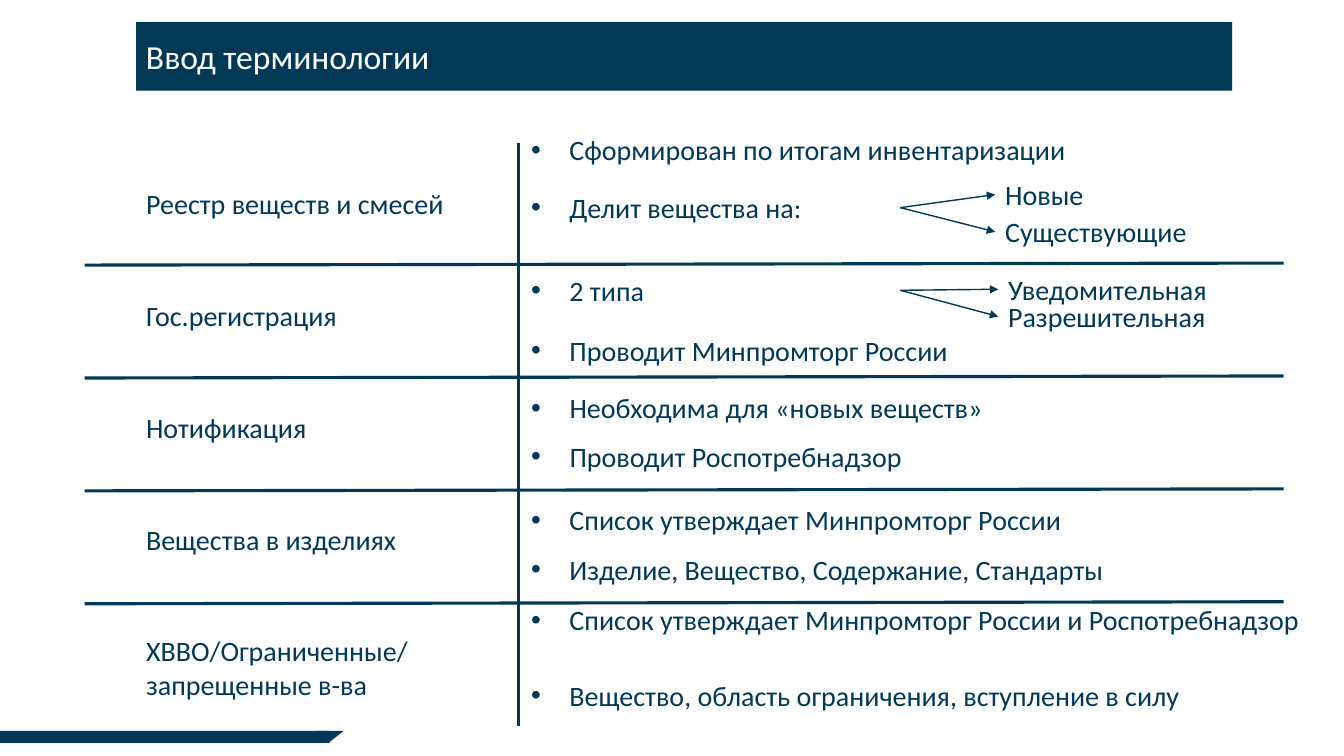
from dataclasses import dataclass

from lxml.etree import SubElement
from pptx import Presentation
from pptx.dml.color import RGBColor
from pptx.enum.shapes import MSO_CONNECTOR, MSO_SHAPE
from pptx.enum.text import MSO_ANCHOR, MSO_AUTO_SIZE
from pptx.oxml.ns import qn
from pptx.shapes.autoshape import Shape
from pptx.shapes.connector import Connector
from pptx.slide import Slide
from pptx.text.text import _Paragraph as Paragraph
from pptx.util import Inches, Pt


@dataclass(frozen=True)
class Theme:
    font: str = "Calibri"
    navy: RGBColor = RGBColor(0x01, 0x38, 0x56)
    white: RGBColor = RGBColor(0xFF, 0xFF, 0xFF)
    title: int = 24
    body: int = 20
    rule: float = 2.25
    arrow: float = 1


@dataclass(frozen=True)
class Kind:
    """One possible answer in a fork, with the place of its text."""
    text: str
    left: float
    top: float
    width: float


@dataclass(frozen=True)
class Point:
    text: str
    top: float
    width: float
    kinds: tuple[Kind, ...] = ()


@dataclass(frozen=True)
class Term:
    lines: tuple[str, ...]
    points: tuple[Point, ...]
    width: float = 4.71


THEME = Theme()
LABEL_X, LABEL_Y, LABEL_STEP = 1.35, 1.8, 1.11
RULE_Y, RULE_STEP = 2.63, 1.12
POINT_X = 5.17
LINE_H = 0.44

TERMS = (
    Term(("Реестр веществ и смесей",), (
        Point("Сформирован по итогам инвентаризации", 1.27, 7.56),
        Point("Делит вещества на:", 1.84, 3.76, (
            Kind("Новые", 9.87, 1.71, 2.32),
            Kind("Существующие", 9.87, 2.08, 2.32))))),
    Term(("Гос.регистрация",), (
        Point("2 типа", 2.66, 3.76, (
            Kind("Уведомительная", 9.9, 2.65, 2.83),
            Kind("Разрешительная", 9.9, 2.92, 2.86))),
        Point("Проводит Минпромторг России", 3.26, 7.56))),
    Term(("Нотификация",), (
        Point("Необходима для «новых веществ»", 3.83, 7.22),
        Point("Проводит Роспотребнадзор", 4.31, 6.05))),
    Term(("Вещества в изделиях",), (
        Point("Список утверждает Минпромторг России", 4.94, 8.03),
        Point("Изделие, Вещество, Содержание, Стандарты", 5.43, 8.63))),
    Term(("ХВВО/Ограниченные/", "запрещенные в-ва"), (
        Point("Список утверждает Минпромторг России и Роспотребнадзор", 5.93, 8.03),
        Point("Вещество, область ограничения, вступление в силу", 6.68, 8.16)), 5.01),
)


def add_run(para: Paragraph, text: str, size: int, color: RGBColor) -> None:
    run = para.add_run()
    run.text = text
    run.font.name = THEME.font
    run.font.size = Pt(size)
    run.font.color.rgb = color


def add_bullet(para: Paragraph) -> None:
    props = para._p.get_or_add_pPr()
    props.set("marL", str(Inches(0.38)))
    props.set("indent", str(Inches(-0.38)))
    SubElement(props, qn("a:buFont")).set("typeface", "Arial")
    SubElement(props, qn("a:buChar")).set("char", "•")


def add_text(slide: Slide, lines: tuple[str, ...], left: float, top: float,
             width: float, bullet: bool = False) -> Shape:
    height = LINE_H + 0.33 * (len(lines) - 1)
    box = slide.shapes.add_textbox(
        Inches(left), Inches(top), Inches(width), Inches(height))
    frame = box.text_frame
    frame.word_wrap = True
    frame.auto_size = MSO_AUTO_SIZE.SHAPE_TO_FIT_TEXT
    for i, line in enumerate(lines):
        para = frame.add_paragraph() if i else frame.paragraphs[0]
        if bullet:
            add_bullet(para)
        add_run(para, line, THEME.body, THEME.navy)
    return box


def add_block(slide: Slide, kind: MSO_SHAPE, left: float, top: float,
              width: float, height: float) -> Shape:
    block = slide.shapes.add_shape(
        kind, Inches(left), Inches(top), Inches(width), Inches(height))
    block.shadow.inherit = False
    block.fill.solid()
    block.fill.fore_color.rgb = THEME.navy
    block.line.fill.background()
    return block


def add_line(slide: Slide, x1: float, y1: float, x2: float, y2: float,
             weight: float) -> Connector:
    line = slide.shapes.add_connector(
        MSO_CONNECTOR.STRAIGHT, Inches(x1), Inches(y1), Inches(x2), Inches(y2))
    line.line.color.rgb = THEME.navy
    line.line.width = Pt(weight)
    SubElement(line._element.spPr, qn("a:effectLst"))
    return line


def add_arrow(slide: Slide, start: Shape, end: Shape) -> None:
    """Join the right side of start to the left side of end."""
    arrow = add_line(slide, 0, 0, 1, 1, THEME.arrow)
    arrow.begin_connect(start, 3)
    arrow.end_connect(end, 1)
    SubElement(arrow.line._get_or_add_ln(), qn("a:tailEnd")).set("type", "triangle")


def add_point(slide: Slide, point: Point) -> None:
    box = add_text(slide, (point.text,), POINT_X, point.top, point.width, True)
    for kind in point.kinds:
        end = add_text(slide, (kind.text,), kind.left, kind.top, kind.width)
        add_arrow(slide, box, end)


def add_title(slide: Slide, text: str) -> None:
    bar = add_block(slide, MSO_SHAPE.RECTANGLE, LABEL_X, 0.22, 10.87, 0.68)
    bar.text_frame.vertical_anchor = MSO_ANCHOR.MIDDLE
    para = bar.text_frame.paragraphs[0]
    para.alignment = 1
    add_run(para, text, THEME.title, THEME.white)


def main() -> None:
    deck = Presentation()
    deck.slide_width, deck.slide_height = Inches(13.33), Inches(7.5)
    slide = deck.slides.add_slide(deck.slide_layouts[6])

    tip = add_block(slide, MSO_SHAPE.ISOSCELES_TRIANGLE, 3.13, 7.25, 0.28, 0.11)
    tip.rotation = 180
    add_block(slide, MSO_SHAPE.RECTANGLE, 0, 7.25, 3.27, 0.12)
    add_title(slide, "Ввод терминологии")

    add_line(slide, 5.14, 1.42, 5.14, 7.2, THEME.rule)
    for i, term in enumerate(TERMS):
        add_text(slide, term.lines, LABEL_X, LABEL_Y + i * LABEL_STEP, term.width)
        if i < len(TERMS) - 1:
            y = RULE_Y + i * RULE_STEP
            add_line(slide, 0.84, y, 12.73, y - 0.02, THEME.rule)
        for point in term.points:
            add_point(slide, point)

    deck.save("out.pptx")


if __name__ == "__main__":
    main()
